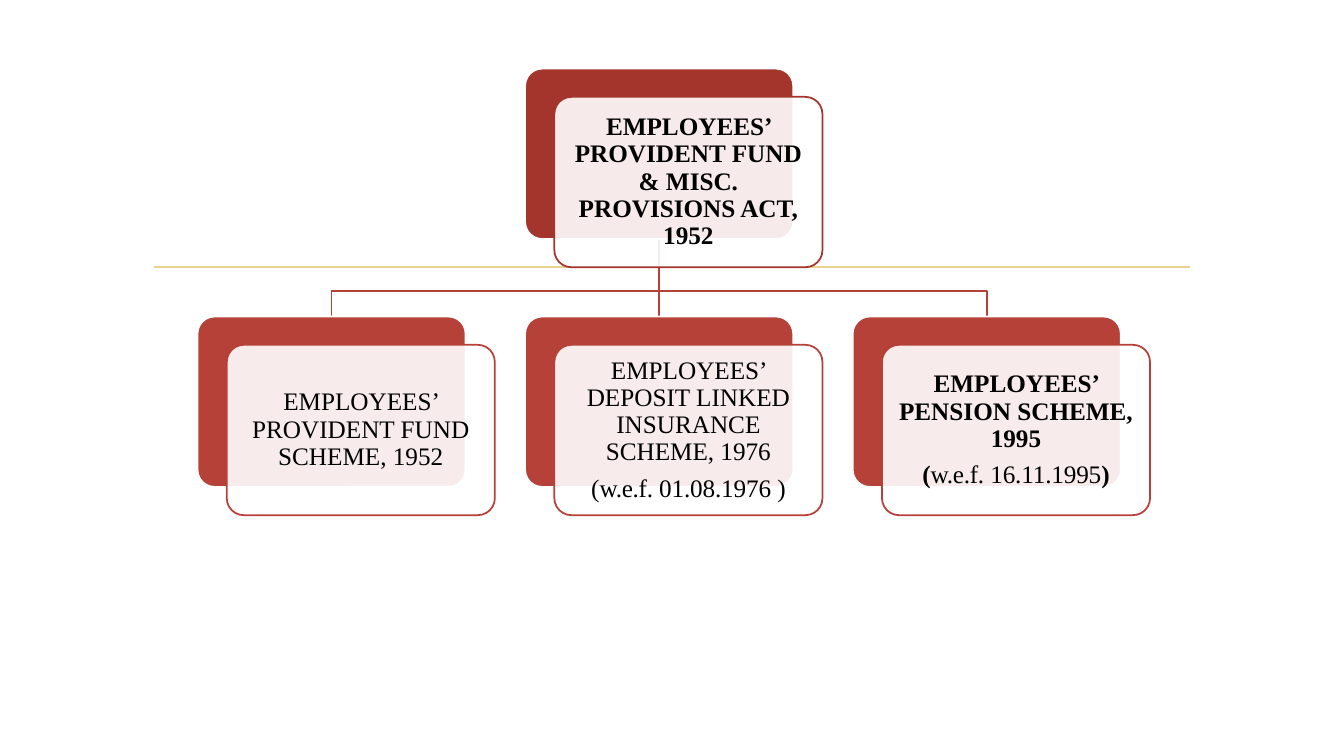
from pptx import Presentation
from pptx.dml.color import RGBColor
from pptx.enum.shapes import MSO_CONNECTOR, MSO_SHAPE
from pptx.enum.text import MSO_ANCHOR, PP_ALIGN
from pptx.util import Pt
from lxml import etree

ROUNDED = MSO_SHAPE.ROUNDED_RECTANGLE
STRAIGHT = MSO_CONNECTOR.STRAIGHT
MIDDLE = MSO_ANCHOR.MIDDLE
CENTER = PP_ALIGN.CENTER
A = "{http://schemas.openxmlformats.org/drawingml/2006/main}"

COLORS = {"rule": "E8D191", "act": "A4352C", "scheme": "B64139",
          "white": "FFFFFF", "text": "000000"}

CARD_W, CARD_H = 191.5, 121.7
FRONT_DX, FRONT_DY = 20.9, 20.2
LEFT, COLUMN_STEP = 141.1, 234
ACT_TOP, SCHEME_TOP = 49, 226.1
BEND_Y = 208.1

# Cards: column, top, colour, paragraphs of (text, bold, spacing in 1/100 pt)
CARDS = [
    (1, ACT_TOP, "act",
     [[("EMPLOYEES’ PROVIDENT FUND & MISC. PROVISIONS ACT, 1952", True, 0)]]),
    (0, SCHEME_TOP, "scheme",
     [[("EMPLOYEES’ PROVIDENT FUND SCHEME, 1952", False, 0)]]),
    (1, SCHEME_TOP, "scheme",
     [[("EMPLOYEES’ DEPOSIT LINKED INSURANCE SCHEME, 1976", False, 0)],
      [("(", False, 0), ("w.e.f. ", False, -20),
       ("01.08.1976 ", False, -10), (")", False, 0)]]),
    (2, SCHEME_TOP, "scheme",
     [[("EMPLOYEES’ PENSION SCHEME, 1995", True, 0)],
      [("(", True, 0), ("w.e.f. ", False, -20),
       ("16.11.1995", False, -10), (")", True, 0)]]),
]


def set_line(shape, color):
    shape.line.color.rgb = RGBColor.from_string(COLORS[color])
    shape.line.width = Pt(1.25)


def add_straight(x1, y1, x2, y2, color):
    line = slide.shapes.add_connector(STRAIGHT, Pt(x1), Pt(y1), Pt(x2), Pt(y2))
    set_line(line, color)
    etree.SubElement(line._element.spPr, A + "effectLst")


prs = Presentation()
prs.slide_width, prs.slide_height = Pt(960), Pt(540)
slide = prs.slides.add_slide(prs.slide_layouts[6])

# Gold rule across the slide
add_straight(110.2, 190.8, 850.3, 190.8, "rule")

# Branches from the act to its three schemes
act_x = LEFT + COLUMN_STEP + CARD_W / 2
act_bottom = ACT_TOP + CARD_H
for side in (1, -1):
    scheme_x = act_x + side * COLUMN_STEP
    builder = slide.shapes.build_freeform(Pt(act_x), Pt(act_bottom))
    builder.add_line_segments(
        [(Pt(act_x), Pt(BEND_Y)), (Pt(scheme_x), Pt(BEND_Y)),
         (Pt(scheme_x), Pt(SCHEME_TOP))], close=False)
    branch = builder.convert_to_shape()
    branch.fill.background()
    set_line(branch, "scheme")
    branch.shadow.inherit = False
add_straight(act_x, act_bottom, act_x, SCHEME_TOP, "scheme")

# Cards: a solid back plate and a translucent front plate with the text
for column, top, color, paragraphs in CARDS:
    left = LEFT + column * COLUMN_STEP
    plates = [(0, 0, color, "white"), (FRONT_DX, FRONT_DY, "white", color)]
    for dx, dy, fill, outline in plates:
        plate = slide.shapes.add_shape(
            ROUNDED, Pt(left + dx), Pt(top + dy), Pt(CARD_W), Pt(CARD_H))
        plate.adjustments[0] = 0.1
        plate.shadow.inherit = False
        plate.fill.solid()
        plate.fill.fore_color.rgb = RGBColor.from_string(COLORS[fill])
        set_line(plate, outline)

    # The last plate is the front one
    front_color = plate._element.spPr.find(f"{A}solidFill/{A}srgbClr")
    etree.SubElement(front_color, A + "alpha", val="90000")
    frame = plate.text_frame
    frame.word_wrap = True
    frame.vertical_anchor = MIDDLE
    frame.margin_left = frame.margin_right = Pt(5)
    frame.margin_top = frame.margin_bottom = Pt(5)
    for index, runs in enumerate(paragraphs):
        paragraph = frame.add_paragraph() if index else frame.paragraphs[0]
        paragraph.alignment = CENTER
        paragraph.line_spacing = 0.9
        paragraph.space_after = Pt(6.3)
        paragraph.font.name = "Times New Roman"
        paragraph.font.size = Pt(18)
        paragraph.font.color.rgb = RGBColor.from_string(COLORS["text"])
        for text, bold, spacing in runs:
            run = paragraph.add_run()
            run.text = text
            run.font.bold = bold
            if spacing:
                run._r.get_or_add_rPr().set("spc", str(spacing))

prs.save("out.pptx")
